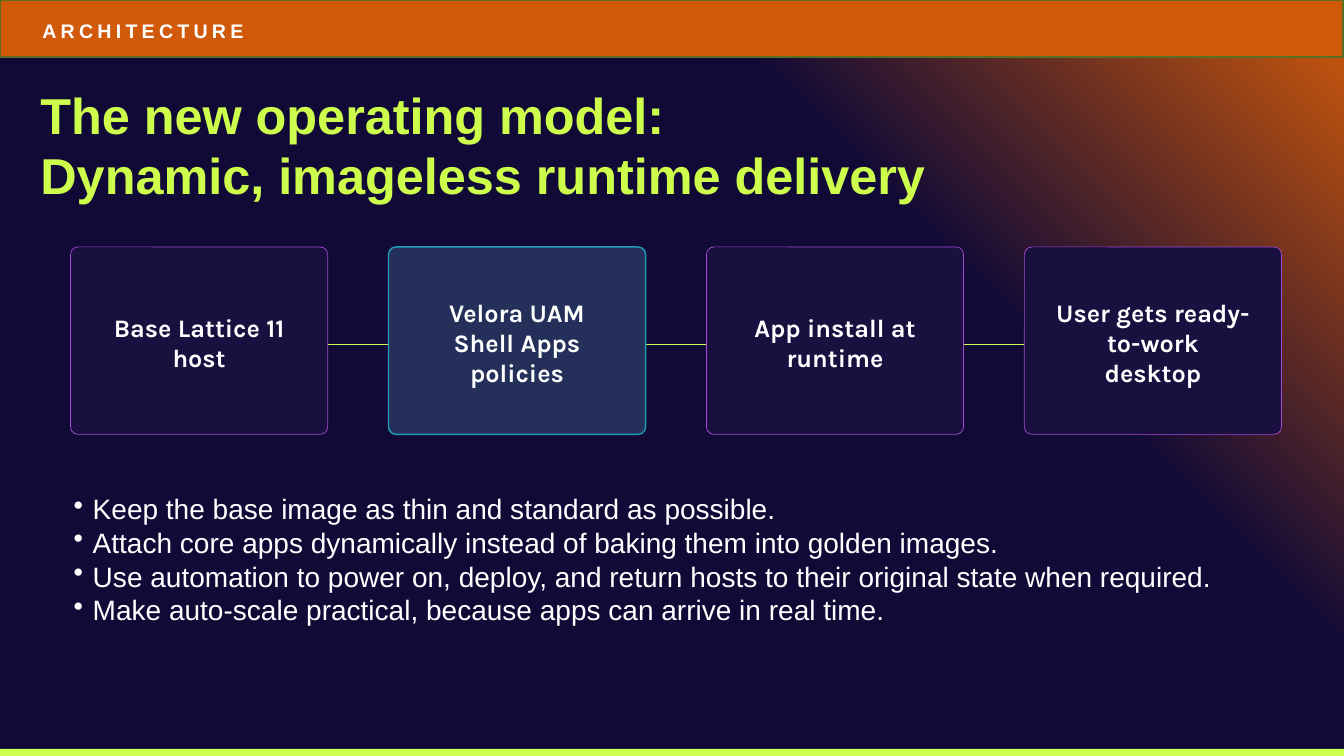
from lxml import etree
from pptx import Presentation
from pptx.dml.color import RGBColor
from pptx.enum.shapes import MSO_CONNECTOR, MSO_SHAPE
from pptx.enum.text import MSO_ANCHOR, MSO_AUTO_SIZE, PP_ALIGN
from pptx.oxml.ns import qn
from pptx.util import Inches, Pt

RECTANGLE = MSO_SHAPE.RECTANGLE
ROUNDED = MSO_SHAPE.ROUNDED_RECTANGLE
STRAIGHT = MSO_CONNECTOR.STRAIGHT
TOP, MIDDLE = MSO_ANCHOR.TOP, MSO_ANCHOR.MIDDLE
LEFT, CENTER = PP_ALIGN.LEFT, PP_ALIGN.CENTER
NO_AUTOFIT = MSO_AUTO_SIZE.NONE

NAVY = RGBColor(0x12, 0x0A, 0x36)
GLOW = RGBColor(0xD1, 0x5A, 0x0A)
ORANGE = RGBColor(0xD0, 0x5A, 0x09)
OLIVE = RGBColor(0x5A, 0x6F, 0x21)
LIME = RGBColor(0xCD, 0xFF, 0x4E)
TITLE_LIME = RGBColor(0xCE, 0xFE, 0x4C)
ARROW_LIME = RGBColor(0xCC, 0xFF, 0x4E)
CARD_FILL = RGBColor(0x19, 0x10, 0x3F)
CARD_LINE = RGBColor(0xA4, 0x49, 0xD4)
ACTIVE_FILL = RGBColor(0x24, 0x30, 0x5A)
ACTIVE_LINE = RGBColor(0x1D, 0x9D, 0xB7)
WHITE = RGBColor(0xFF, 0xFF, 0xFF)
SOFT_WHITE = RGBColor(0xFE, 0xFF, 0xFF)

TITLE_FONT = {"name": "Arial", "size": Pt(36), "bold": True, "color": TITLE_LIME}
HEADER_FONT = {"name": "Arial", "size": Pt(14), "bold": True, "color": WHITE}
CARD_FONT = {"name": "Karla", "size": Pt(18), "bold": True, "color": SOFT_WHITE}
BULLET_FONT = {"name": "Arial", "size": Pt(20), "bold": False, "color": SOFT_WHITE}

STEPS = [
    ["Base Lattice 11 host"],
    ["Velora UAM", "Shell Apps policies"],
    ["App install at runtime"],
    ["User gets ready-to-work", "desktop"],
]
ACTIVE_STEP = 1
BULLETS = [
    "Keep the base image as thin and standard as possible.",
    "Attach core apps dynamically instead of baking them into golden images.",
    "Use automation to power on, deploy, and return hosts to their original state when required.",
    "Make auto-scale practical, because apps can arrive in real time.",
]


def format_font(font, values):
    for name, value in values.items():
        if name == "color":
            font.color.rgb = value
        else:
            setattr(font, name, value)


def write_text(shape, lines, font_values, alignment=LEFT, anchor=MIDDLE, margins=(0, 0, 0, 0), bullet=None):
    frame = shape.text_frame
    frame.text = "\n".join(lines)
    frame.word_wrap = True
    frame.auto_size = NO_AUTOFIT
    frame.vertical_anchor = anchor
    for side, margin in zip(("left", "top", "right", "bottom"), margins):
        setattr(frame, f"margin_{side}", Inches(margin))
    for paragraph in frame.paragraphs:
        paragraph.alignment = alignment
        if bullet:
            properties = paragraph._p.get_or_add_pPr()
            properties.set("marL", str(Inches(0.19)))
            properties.set("indent", str(Inches(-0.19)))
            etree.SubElement(properties, qn("a:buChar"), char=bullet)
        for run in paragraph.runs:
            format_font(run.font, font_values)


def add_box(slide, preset, box, fill, line=None, width=0):
    shape = slide.shapes.add_shape(preset, *map(Inches, box))
    shape.shadow.inherit = False
    shape.fill.solid()
    shape.fill.fore_color.rgb = fill
    if line is None:
        shape.line.fill.background()
    else:
        shape.line.color.rgb = line
        shape.line.width = Pt(width)
    return shape


def paint_background(slide):
    fill = slide.background.fill
    fill.gradient()
    for stop, position, color in zip(fill.gradient_stops, (0, 0.31), (GLOW, NAVY)):
        stop.position = position
        stop.color.rgb = color
    gradient = slide.element.find(".//" + qn("a:gradFill"))
    gradient.remove(gradient.find(qn("a:lin")))
    glow_path = etree.SubElement(gradient, qn("a:path"), path="circle")
    etree.SubElement(glow_path, qn("a:fillToRect"), l="100000", b="100000")


def place_title(slide, box):
    title = slide.shapes.title
    title.left, title.top, title.width, title.height = map(Inches, box)
    write_text(title, ["The new operating model:", "Dynamic, imageless runtime delivery"], TITLE_FONT)


def add_arrow(slide, start, end, middle):
    arrow = slide.shapes.add_connector(STRAIGHT, *map(Inches, (start, middle, end, middle)))
    arrow.line.color.rgb = ARROW_LIME
    arrow.line.width = Pt(1)
    etree.SubElement(arrow.line._get_or_add_ln(), qn("a:tailEnd"), type="triangle")
    etree.SubElement(arrow._element.spPr, qn("a:effectLst"))


def add_flow(slide, box):
    left, top, width, height = box
    card_width = 2.55
    pitch = (width - card_width) / (len(STEPS) - 1)
    for index in range(len(STEPS) - 1):
        start = left + 2 + index * pitch
        add_arrow(slide, start, start + 1.46, top + 0.97)
    for index, lines in enumerate(STEPS):
        style = (ACTIVE_FILL, ACTIVE_LINE, 1) if index == ACTIVE_STEP else (CARD_FILL, CARD_LINE, 0.5)
        card = add_box(slide, ROUNDED, (left + index * pitch, top, card_width, height), *style)
        card.adjustments[0] = 0.04
        write_text(card, lines, CARD_FONT, CENTER, margins=(0.2, 0.03, 0.2, 0))


def add_bullets(slide, box):
    body = slide.shapes.add_textbox(*map(Inches, box))
    write_text(body, BULLETS, BULLET_FONT, anchor=TOP, margins=(0.03,) * 4, bullet="•")


def add_header(slide, box):
    header = add_box(slide, RECTANGLE, box, ORANGE, OLIVE, 1.5)
    write_text(header, ["ARCHITECTURE"], HEADER_FONT, margins=(0.42, 0.03, 0.1, 0))
    header.text_frame.paragraphs[0].runs[0].font._element.set("spc", "300")


def build_slide(presentation):
    slide = presentation.slides.add_slide(presentation.slide_layouts[5])
    paint_background(slide)
    add_box(slide, RECTANGLE, (0, 7.43, 13.33, 0.09), LIME)
    place_title(slide, (0.4, 0.99, 12.23, 0.88))
    add_flow(slide, (0.7, 2.45, 12.01, 1.86))
    add_bullets(slide, (0.7, 4.85, 11.83, 1.9))
    add_header(slide, (0, 0, 13.32, 0.57))


def main():
    presentation = Presentation()
    presentation.slide_width = Inches(13.33)
    presentation.slide_height = Inches(7.5)
    build_slide(presentation)
    presentation.save("out.pptx")


if __name__ == "__main__":
    main()
